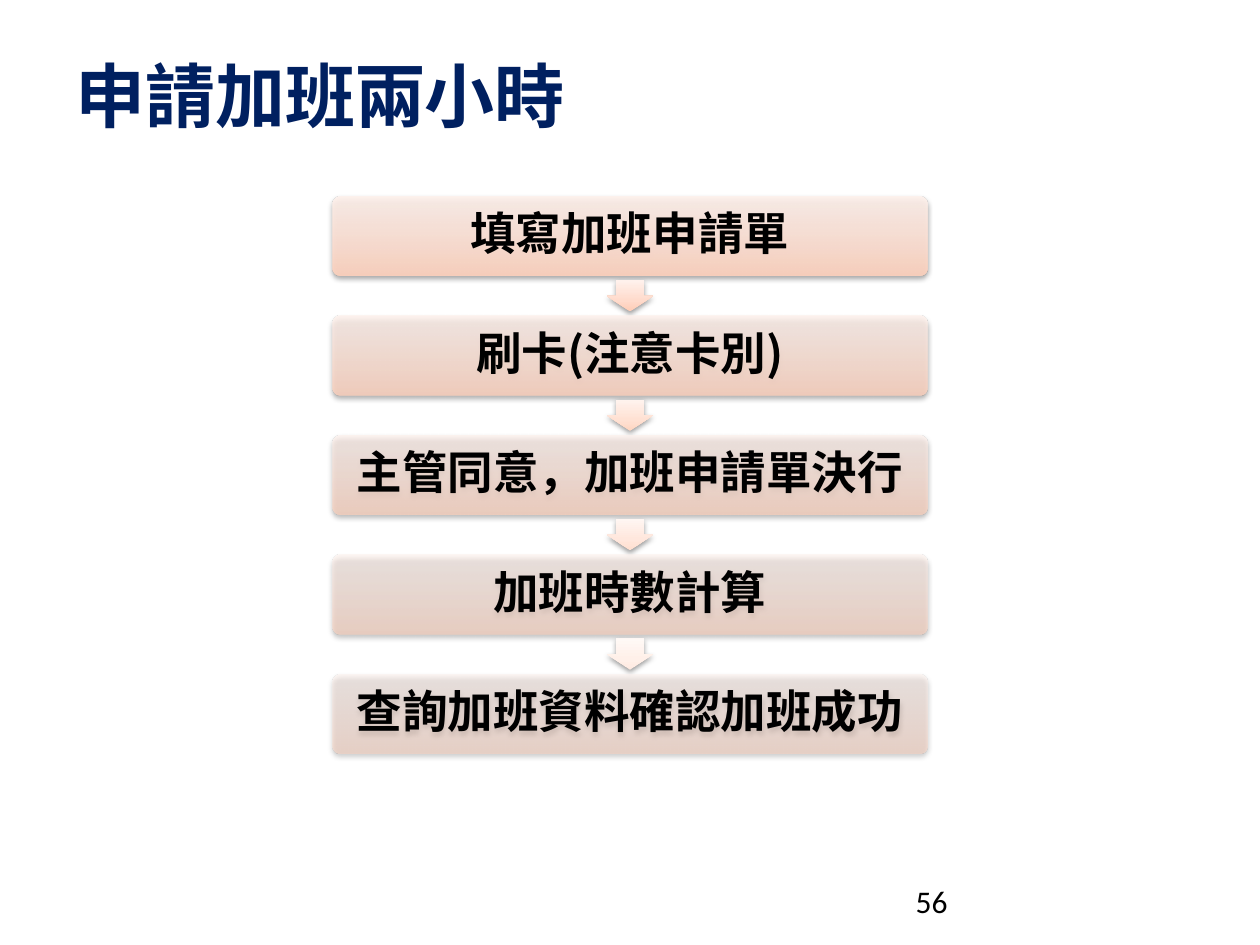
from dataclasses import dataclass

from pptx import Presentation
from pptx.dml.color import RGBColor
from pptx.enum.shapes import MSO_SHAPE
from pptx.enum.text import MSO_ANCHOR, PP_ALIGN
from pptx.oxml import parse_xml
from pptx.oxml.ns import nsdecls, qn
from pptx.util import Cm, Pt


@dataclass(frozen=True)
class Theme:
    navy: str = "002060"
    black: str = "000000"
    cjk_font: str = "Noto Sans CJK SC"
    number_font: str = "Calibri"
    title_size: int = 40
    step_size: int = 26
    number_size: int = 18
    step_colors: tuple = ("FFD2BD", "FFDED0", "FFF2ED")
    arrow_colors: tuple = (
        ("FFCDB7", "FFDBCC", "FFF1EC"),
        ("FFD5C1", "FFE1D3", "FFF3EE"),
        ("FFDECF", "FFE7DD", "FFF6F2"),
        ("FFEAE1", "FFF0E9", "FFF9F6"),
    )


THEME = Theme()
STEPS = (
    "填寫加班申請單",
    "刷卡(注意卡別)",
    "主管同意，加班申請單決行",
    "加班時數計算",
    "查詢加班資料確認加班成功",
)


def write(tf, text, size, color, font, bold=False):
    p = tf.paragraphs[0]
    r = p.add_run()
    r.text = text
    p.font.size, p.font.bold, p.font.name = Pt(size), bold, font
    p.font.color.rgb = RGBColor.from_string(color)
    r.font._element.append(parse_xml(f'<a:ea {nsdecls("a")} typeface="{font}"/>'))
    return p


def style_shape(sp, colors, angle, opacity=100):
    """Give a shape a three-stop gradient, no outline and a soft shadow below."""
    sp.line.fill.background()
    sp.shadow.inherit = False
    stops = "".join(
        f'<a:gs pos="{pos * 1000}"><a:srgbClr val="{color}">'
        f'<a:alpha val="{opacity * 1000}"/></a:srgbClr></a:gs>'
        for pos, color in zip((0, 35, 100), colors))
    sp_pr = sp._element.spPr
    sp_pr.find(qn("a:ln")).addprevious(parse_xml(
        f'<a:gradFill {nsdecls("a")} rotWithShape="1"><a:gsLst>{stops}</a:gsLst>'
        f'<a:lin ang="{angle * 60000}" scaled="0"/></a:gradFill>'))
    sp_pr.find(qn("a:effectLst")).append(parse_xml(
        f'<a:outerShdw {nsdecls("a")} blurRad="{Pt(3.1)}" dist="{Pt(1.6)}" '
        f'dir="5400000" rotWithShape="0"><a:srgbClr val="{THEME.black}">'
        '<a:alpha val="38000"/></a:srgbClr></a:outerShdw>'))


def add_title(s, text, left, top, width, height):
    tf = s.shapes.add_textbox(left, top, width, height).text_frame
    tf.word_wrap = True
    tf.vertical_anchor = MSO_ANCHOR.MIDDLE
    write(tf, text, THEME.title_size, THEME.navy, THEME.cjk_font, bold=True)


def add_step(s, text, opacity, left, top, width, height):
    sp = s.shapes.add_shape(MSO_SHAPE.ROUNDED_RECTANGLE, left, top, width, height)
    sp.adjustments[0] = 0.1
    style_shape(sp, THEME.step_colors, 270, opacity)
    tf = sp.text_frame
    tf.word_wrap = True
    tf.vertical_anchor = MSO_ANCHOR.MIDDLE
    tf.margin_left = tf.margin_right = tf.margin_top = tf.margin_bottom = Cm(0.28)
    p = write(tf, text, THEME.step_size, THEME.black, THEME.cjk_font, bold=True)
    p.alignment = PP_ALIGN.CENTER
    p.line_spacing = 0.9


def add_down_arrow(s, colors, center_x, center_y):
    length, breadth = Cm(0.63), Cm(0.94)
    sp = s.shapes.add_shape(MSO_SHAPE.RIGHT_ARROW, center_x - length // 2,
                            center_y - breadth // 2, length, breadth)
    sp.rotation = 90
    sp.adjustments[0], sp.adjustments[1] = 0.6, 0.5
    style_shape(sp, colors, 180)


def add_flow(s, steps, left, top, width, height):
    """Stack the steps evenly in the box, with an arrow in each gap."""
    step_height = Cm(1.6)
    pitch = (height - step_height) // (len(steps) - 1)
    gap = pitch - step_height
    for i, text in enumerate(steps):
        y = top + i * pitch
        add_step(s, text, 90 - 10 * i, left, y, width, step_height)
        if i < len(steps) - 1:
            add_down_arrow(s, THEME.arrow_colors[i], left + width // 2,
                           y + step_height + gap // 2)


def add_page_number(s, number, left, top, width, height):
    tf = s.shapes.add_textbox(left, top, width, height).text_frame
    tf.word_wrap = True
    write(tf, number, THEME.number_size, THEME.black, THEME.number_font)


def main():
    prs = Presentation()
    prs.slide_width, prs.slide_height = Cm(25.4), Cm(19.05)
    s = prs.slides.add_slide(prs.slide_layouts[6])
    add_title(s, "申請加班兩小時", Cm(1.27), Cm(0.91), Cm(20.96), Cm(2))
    add_flow(s, STEPS, Cm(6.7), Cm(3.96), Cm(12), Cm(11.23))
    add_page_number(s, "56", Cm(18.21), Cm(17.65), Cm(5.92), Cm(1.02))
    prs.save("out.pptx")


if __name__ == "__main__":
    main()
